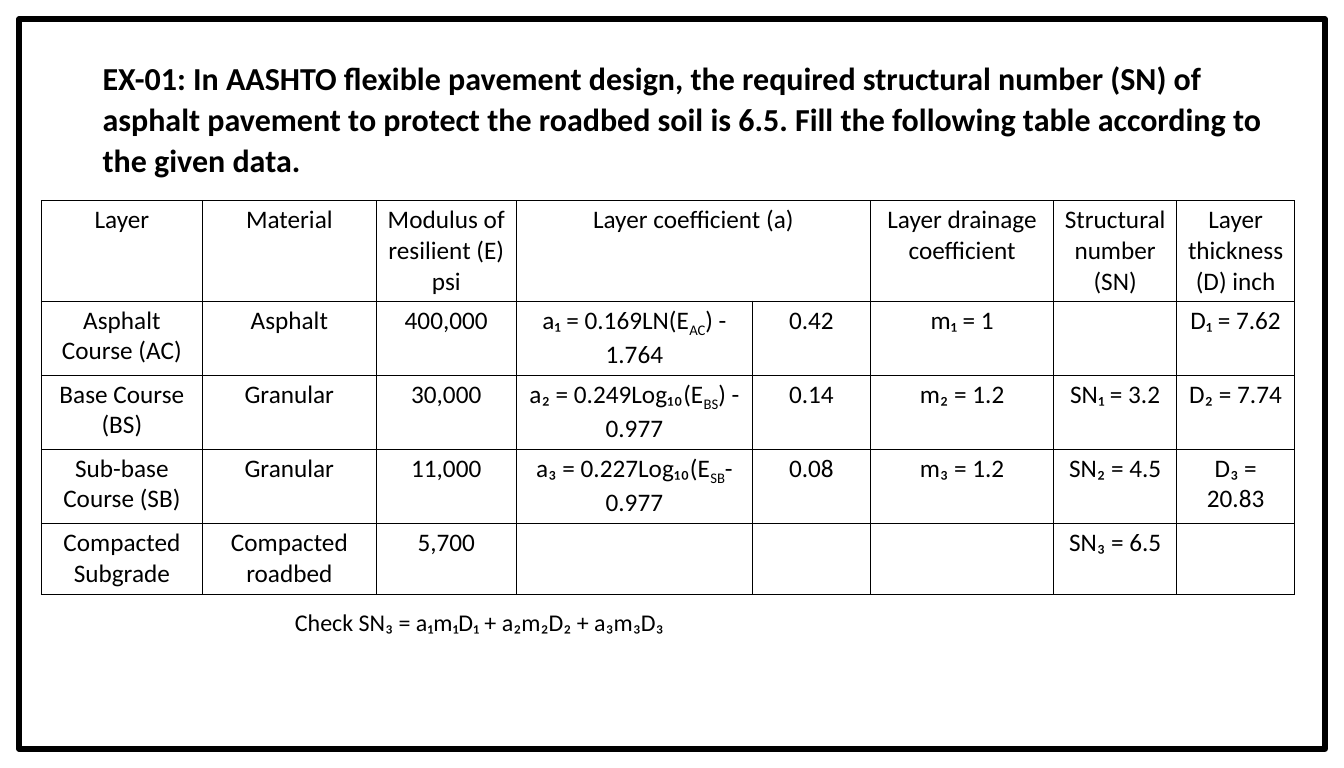
from lxml.etree import SubElement
from pptx import Presentation
from pptx.dml.color import RGBColor
from pptx.enum.shapes import MSO_SHAPE
from pptx.enum.text import PP_ALIGN
from pptx.oxml.ns import qn
from pptx.util import Pt

COLORS = {"ink": "000000", "paper": "FFFFFF"}
TITLE = (
    "EX-01: In AASHTO flexible pavement design, the required structural number (SN) of "
    "asphalt pavement to protect the roadbed soil is 6.5. Fill the following table "
    "according to the given data."
)
CHECK = "Check SN₃ = a₁m₁D₁ + a₂m₂D₂ + a₃m₃D₃"
ROWS = [
    ("Layer", "Material", "Modulus of resilient (E) psi", "Layer coefficient (a)", "",
     "Layer drainage coefficient", "Structural number (SN)", "Layer thickness (D) inch"),
    ("Asphalt Course (AC)", "Asphalt", "400,000", "a₁ = 0.169LN(E_AC_) - 1.764", "0.42",
     "m₁ = 1", "", "D₁ = 7.62"),
    ("Base Course (BS)", "Granular", "30,000", "a₂ = 0.249Log₁₀(E_BS_) - 0.977", "0.14",
     "m₂ = 1.2", "SN₁ = 3.2", "D₂ = 7.74"),
    ("Sub-base Course (SB)", "Granular", "11,000", "a₃ = 0.227Log₁₀(E_SB_- 0.977", "0.08",
     "m₃ = 1.2", "SN₂ = 4.5", "D₃ = 20.83"),
    ("Compacted Subgrade", "Compacted roadbed", "5,700", "", "", "", "SN₃ = 6.5", ""),
]
COL_WIDTHS = [120.9, 130.3, 105.1, 177.1, 88.5, 137.5, 92.2, 88.5]
ROW_HEIGHTS = [75.4, 55.5, 55.5, 55.9, 52.9]
TABLE_LEFT, TABLE_TOP = 31, 150.5
TITLE_FONT = {"name": "Calibri", "size": Pt(24), "bold": True}
CELL_FONT = {"name": "Calibri", "size": Pt(18.9), "bold": False}
CHECK_FONT = {"name": "Calibri", "size": Pt(18), "bold": False}
CELL_MARGINS = {"margin_left": Pt(7.2), "margin_right": Pt(7.2),
                "margin_top": Pt(3), "margin_bottom": Pt(3)}
TEXT_MARGINS = dict.fromkeys(CELL_MARGINS, Pt(0))


def rgb(key):
    return RGBColor.from_string(COLORS[key])


def set_attrs(obj, values):
    for name, value in values.items():
        setattr(obj, name, value)


def add_text(p, text, font):
    for i, part in enumerate(text.split("_")):
        r = p.add_run()
        r.text = part
        set_attrs(r.font, font)
        r.font.color.rgb = rgb("ink")
        if i % 2:
            r._r.get_or_add_rPr().set("baseline", "-25000")


def add_box(s, left, top, width, height, text, font, spacing):
    tf = s.shapes.add_textbox(Pt(left), Pt(top), Pt(width), Pt(height)).text_frame
    set_attrs(tf, TEXT_MARGINS | {"word_wrap": True})
    p = tf.paragraphs[0]
    p.line_spacing = spacing
    add_text(p, text, font)


def add_borders(cell):
    tcPr = cell._tc.get_or_add_tcPr()
    for side in ("lnL", "lnR", "lnT", "lnB"):
        ln = SubElement(tcPr, qn(f"a:{side}"), w=str(Pt(1)))
        fill = SubElement(ln, qn("a:solidFill"))
        SubElement(fill, qn("a:srgbClr"), val=COLORS["ink"])


def add_frame(s):
    sp = s.shapes.add_shape(MSO_SHAPE.RECTANGLE, Pt(14.4), Pt(14.4), Pt(979.2), Pt(547.2))
    sp.shadow.inherit = False
    sp.fill.solid()
    sp.fill.fore_color.rgb = rgb("paper")
    sp.line.color.rgb = rgb("ink")
    sp.line.width = Pt(4.5)


def add_layer_table(s):
    table = s.shapes.add_table(
        len(ROWS), len(COL_WIDTHS), Pt(TABLE_LEFT), Pt(TABLE_TOP),
        Pt(sum(COL_WIDTHS)), Pt(sum(ROW_HEIGHTS))).table
    set_attrs(table, {"first_row": False, "horz_banding": False})
    for col, width in zip(table.columns, COL_WIDTHS):
        col.width = Pt(width)
    for row, height, texts in zip(table.rows, ROW_HEIGHTS, ROWS):
        row.height = Pt(height)
        for cell, text in zip(row.cells, texts):
            set_attrs(cell, CELL_MARGINS)
            add_borders(cell)
            cell.fill.background()
            p = cell.text_frame.paragraphs[0]
            p.alignment = PP_ALIGN.CENTER
            if text:
                add_text(p, text, CELL_FONT)
    table.cell(0, 3).merge(table.cell(0, 4))


def main():
    prs = Presentation()
    set_attrs(prs, {"slide_width": Pt(1008), "slide_height": Pt(576)})
    s = prs.slides.add_slide(prs.slide_layouts[6])
    add_frame(s)
    add_box(s, 77, 41.8, 899, 95, TITLE, TITLE_FONT, 1.07)
    add_layer_table(s)
    add_box(s, 221.2, 455.5, 320, 24, CHECK, CHECK_FONT, 1.0)
    prs.save("out.pptx")


if __name__ == "__main__":
    main()
